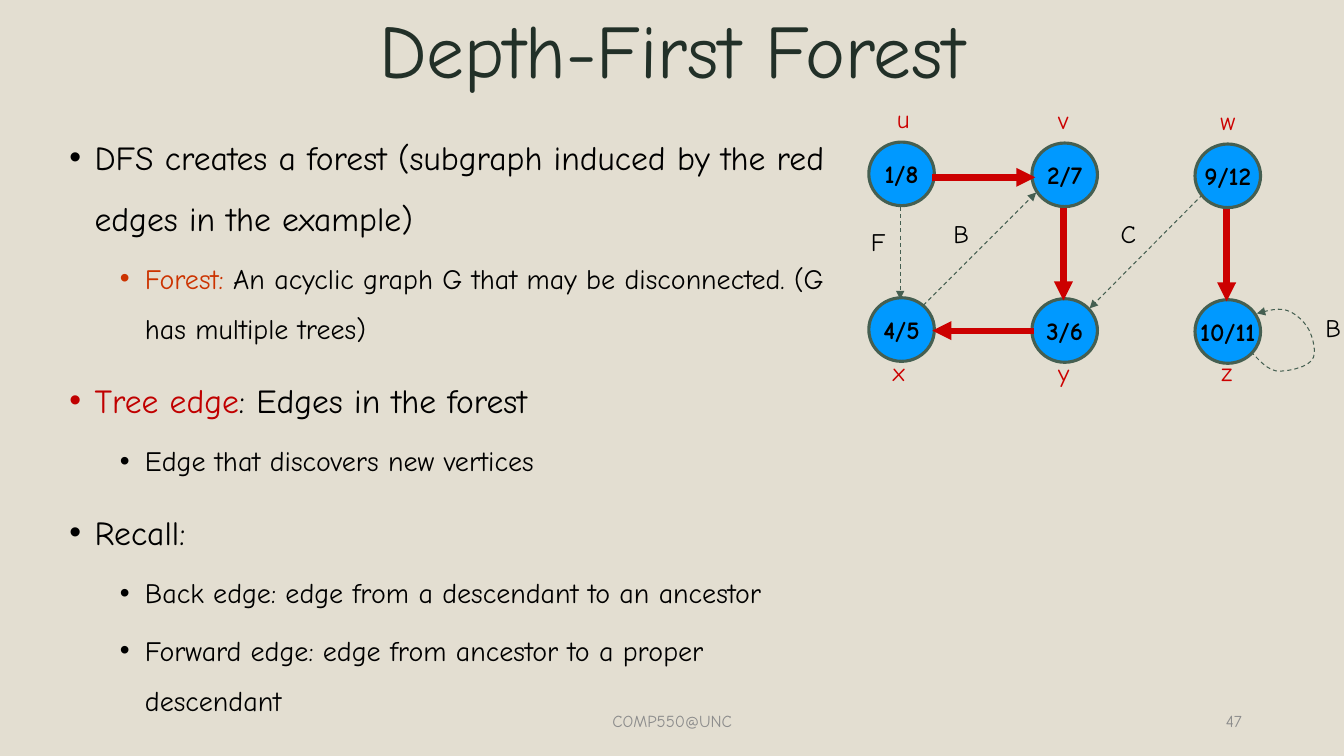
from lxml.etree import SubElement
from pptx import Presentation
from pptx.dml.color import RGBColor
from pptx.enum.dml import MSO_LINE_DASH_STYLE as DASH
from pptx.enum.shapes import MSO_CONNECTOR as CONN, MSO_SHAPE as SHAPE
from pptx.enum.text import MSO_ANCHOR as ANCHOR, PP_ALIGN as ALIGN
from pptx.oxml.ns import qn
from pptx.util import Pt

# Content
TITLE = "Depth-First Forest"
FOOTERS = [("COMP550@UNC", 318.2, 324, ALIGN.CENTER),
           ("47", 678.2, 216, ALIGN.RIGHT)]
# level, runs of (text, colour)
BODY = [
    (0, [("DFS creates a forest (subgraph induced by the red edges in the example)", "text")]),
    (1, [("Forest:", "orange"),
         (" An acyclic graph G that may be disconnected. (G has multiple trees)", "text")]),
    (0, [("Tree edge", "dark_red"), (": Edges in the forest", "text")]),
    (1, [("Edge that discovers new vertices", "text")]),
    (0, [("Recall:", "text")]),
    (1, [("Back edge: edge from a descendant to an ancestor", "text")]),
    (1, [("Forward edge: edge from ancestor to a proper descendant", "text")]),
]
# discovery/finish times, column, row
VERTICES = [("1/8", 0, 0), ("2/7", 1, 0), ("9/12", 2, 0),
            ("4/5", 0, 1), ("3/6", 1, 1), ("10/11", 2, 1)]
# text, left, top, width, colour
LABELS = [
    ("u", 633.6, 70.6, 26.6, "red"), ("v", 748.8, 71.3, 26.6, "red"),
    ("w", 864.7, 72, 31.7, "red"), ("x", 630.7, 251.3, 26.6, "red"),
    ("y", 748.8, 252, 26.6, "red"), ("z", 865.4, 251.3, 25.2, "red"),
    ("B", 673.9, 152.6, 30.2, "text"), ("F", 614.9, 158.4, 28.1, "text"),
    ("C", 793.4, 152.6, 30.2, "text"), ("B", 939.6, 219.6, 30.2, "text"),
]
# start, end (the arrowhead is at the end)
TREE_EDGES = [((666, 126.7), (739.5, 126.7)), ((759.6, 148.3), (759.6, 214.6)),
              ((738.7, 236.2), (666, 236.2)), ((876.2, 149), (876.2, 215.3))]
OTHER_EDGES = [((643, 147.6), (643, 213.8)), ((659.5, 218.2), (740.2, 137.5)),
               ((859, 139), (778.3, 220.3))]
LOOP_START = (893.5, 251.3)
LOOP_CURVES = [  # two control points and an end point
    ((899.3, 257), (904.3, 263.5), (911.5, 265)),
    ((918.7, 265.7), (932.4, 262.8), (936.7, 257.8)),
    ((941, 253.4), (938.2, 242.6), (935.3, 236.2)),
    ((932.4, 230.4), (925.9, 223.9), (919.4, 221.8)),
    ((913.7, 219.6), (905.8, 221.8), (897.8, 223.9)),
]

THEME = dict(
    font="Comic Neue",
    color=dict(bg="E3DED1", title="223028", text="000000", footer="8C8C8C", red="CC0000",
               orange="CC3300", dark_red="C00000", node="0099FF", outline="455F51"),
    size=dict(title=54, body=(24, 20), graph=18, footer=12),
)

# Layout
SLIDE_W, SLIDE_H = 960, 540
NODE_W, NODE_H = 46.8, 45.4
NODE_LEFT, NODE_TOP = 620.6, 101.5
COL_STEP, ROW_STEP, COL_DROP = 116.5, 111.2, 0.7
INDENT = (18, 54)
SPACE_BEFORE = (10, 5)
CURVE_STEPS = 6


def color(name):
    return RGBColor.from_string(THEME["color"][name])


def add_run(p, text, size, color_name, bold=False):
    r = p.add_run()
    r.text = text
    r.font.name = THEME["font"]
    r.font.size = Pt(size)
    r.font.bold = bold
    r.font.color.rgb = color(color_name)
    return r


def add_text(box, text, size, color_name, align=ALIGN.LEFT, anchor=ANCHOR.TOP, wrap=True):
    left, top, width, height = map(Pt, box)
    tf = s.shapes.add_textbox(left, top, width, height).text_frame
    tf.word_wrap = wrap
    tf.vertical_anchor = anchor
    p = tf.paragraphs[0]
    p.alignment = align
    return p, add_run(p, text, size, color_name)


def style_edge(sp, color_name, width, dashed):
    sp.line.color.rgb = color(color_name)
    sp.line.width = Pt(width)
    if dashed:
        sp.line.dash_style = DASH.DASH
    SubElement(sp.line._get_or_add_ln(), qn("a:tailEnd"), type="triangle")


def add_edge(start, end, *style):
    sp = s.shapes.add_connector(CONN.STRAIGHT, *map(Pt, start + end))
    style_edge(sp, *style)
    SubElement(sp._element.spPr, qn("a:effectLst"))


def curve_point(t, *points):
    weights = ((1 - t) ** 3, 3 * t * (1 - t) ** 2, 3 * t * t * (1 - t), t ** 3)
    return tuple(Pt(sum(w * pt[axis] for w, pt in zip(weights, points))) for axis in (0, 1))


prs = Presentation()
prs.slide_width, prs.slide_height = Pt(SLIDE_W), Pt(SLIDE_H)
s = prs.slides.add_slide(prs.slide_layouts[6])
s.background.fill.solid()
s.background.fill.fore_color.rgb = color("bg")

# Title with a soft text shadow
p, r = add_text((0, 2.2, SLIDE_W, 73.4), TITLE, THEME["size"]["title"], "title",
                ALIGN.CENTER, ANCHOR.MIDDLE)
p.line_spacing = 0.9
effects = SubElement(r.font._element, qn("a:effectLst"))
r.font._element.find(qn("a:solidFill")).addnext(effects)
shadow = SubElement(effects, qn("a:outerShdw"), blurRad="38100", dist="38100", dir="2700000")
shade = SubElement(shadow, qn("a:srgbClr"), val="000000")
SubElement(shade, qn("a:alpha"), val="43000")

# Footer
for text, left, width, align in FOOTERS:
    add_text((left, 500.4, width, 28.8), text, THEME["size"]["footer"], "footer",
             align, ANCHOR.MIDDLE)

# Vertices
for times, col, row in VERTICES:
    left = NODE_LEFT + col * COL_STEP
    top = NODE_TOP + row * ROW_STEP + col * COL_DROP
    sp = s.shapes.add_shape(SHAPE.OVAL, Pt(left), Pt(top), Pt(NODE_W), Pt(NODE_H))
    sp.shadow.inherit = False
    sp.fill.solid()
    sp.fill.fore_color.rgb = color("node")
    sp.line.color.rgb = color("outline")
    sp.line.width = Pt(2.25)
    tf = sp.text_frame
    tf.word_wrap = False
    tf.vertical_anchor = ANCHOR.MIDDLE
    p = tf.paragraphs[0]
    p.alignment = ALIGN.CENTER
    add_run(p, times, THEME["size"]["graph"], "text", bold=True)

# Edges
for start, end in TREE_EDGES:
    add_edge(start, end, "red", 4.5, False)
for start, end in OTHER_EDGES:
    add_edge(start, end, "outline", 0.75, True)

# Self-loop at z
loop_points = []
start = LOOP_START
for c1, c2, end in LOOP_CURVES:
    loop_points += [curve_point(i / CURVE_STEPS, start, c1, c2, end)
                    for i in range(1, CURVE_STEPS + 1)]
    start = end
builder = s.shapes.build_freeform(*map(Pt, LOOP_START))
builder.add_line_segments(loop_points, close=False)
loop = builder.convert_to_shape()
loop.shadow.inherit = False
loop.fill.background()
style_edge(loop, "outline", 0.75, True)

# Vertex names and edge types
for text, left, top, width, color_name in LABELS:
    add_text((left, top, width, 36), text, THEME["size"]["graph"], color_name, wrap=False)

# Bulleted text
tf = s.shapes.add_textbox(Pt(42.5), Pt(79.9), Pt(564.5), Pt(404.6)).text_frame
tf.word_wrap = True
for i, (level, runs) in enumerate(BODY):
    p = tf.add_paragraph() if i else tf.paragraphs[0]
    p.level = level
    p.line_spacing = 1.5
    p.space_before = Pt(SPACE_BEFORE[level])
    pPr = p._p.get_or_add_pPr()
    pPr.set("marL", str(Pt(INDENT[level])))
    pPr.set("indent", str(-Pt(18)))
    SubElement(pPr, qn("a:buFont"), typeface="Arial")
    SubElement(pPr, qn("a:buChar"), char="•")
    for text, color_name in runs:
        add_run(p, text, THEME["size"]["body"][level], color_name)

prs.save("out.pptx")
